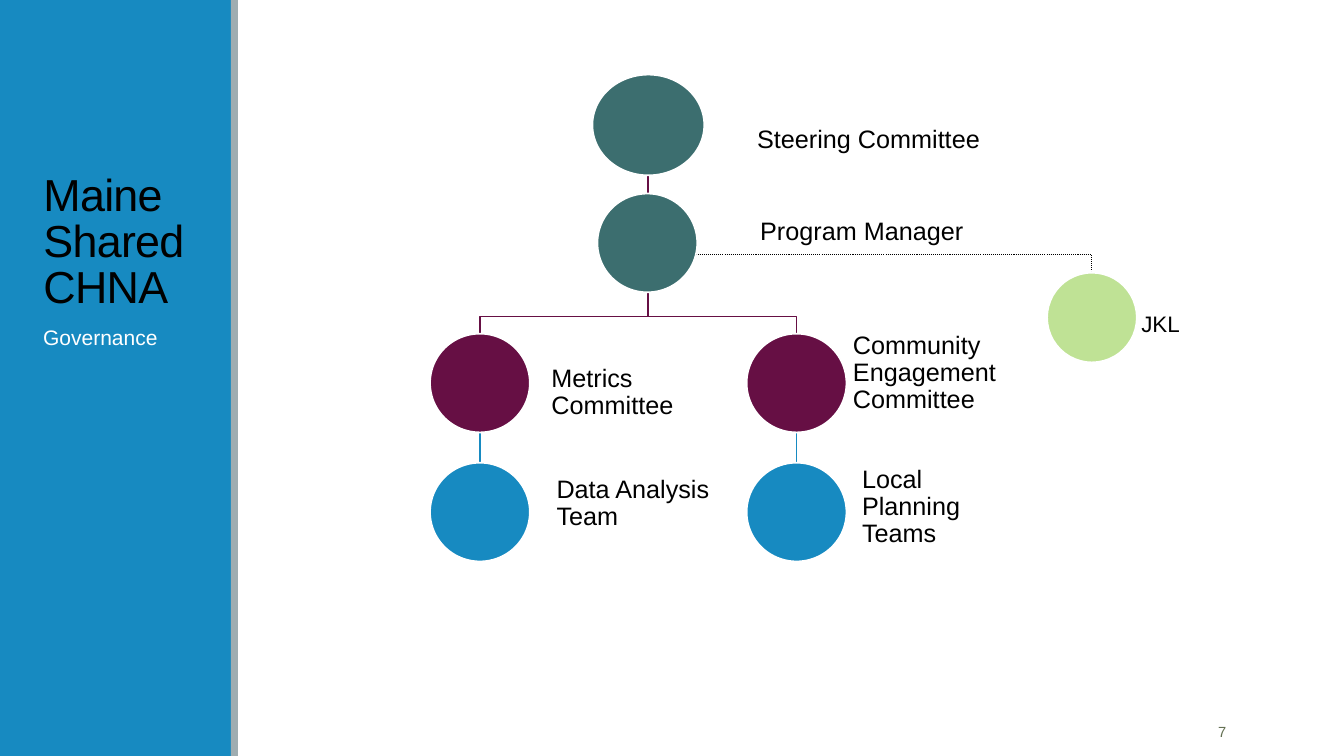
from dataclasses import dataclass

from lxml.etree import SubElement
from pptx import Presentation
from pptx.dml.color import RGBColor
from pptx.enum.dml import MSO_LINE
from pptx.enum.shapes import MSO_CONNECTOR, MSO_SHAPE
from pptx.enum.text import MSO_ANCHOR, MSO_AUTO_SIZE, PP_ALIGN
from pptx.oxml.ns import qn
from pptx.util import Inches, Pt


@dataclass(frozen=True)
class Theme:
    font: str = "Arial"
    blue: str = "178AC1"
    grey: str = "9FADB1"
    teal: str = "3C6E6F"
    plum: str = "660F44"
    lime: str = "BFE295"
    olive: str = "637052"
    black: str = "000000"
    white: str = "FFFFFF"
    title_size: float = 32
    label_size: float = 18
    partner_size: float = 16
    subtitle_size: float = 15
    number_size: float = 10.5
    line_width: float = 1.25
    dotted_width: float = 0.75


def set_attributes(target, values):
    for name, value in values.items():
        setattr(target, name, value)


class SlideBuilder:
    def __init__(self, slide, theme):
        self.slide = slide
        self.theme = theme

    def style_line(self, line, color, width):
        line.color.rgb = RGBColor.from_string(color)
        line.width = Pt(width)

    def shape(self, kind, box, fill, outline=None):
        shape = self.slide.shapes.add_shape(kind, *map(Inches, box))
        shape.shadow.inherit = False
        shape.fill.solid()
        shape.fill.fore_color.rgb = RGBColor.from_string(fill)
        if outline:
            self.style_line(shape.line, outline, self.theme.line_width)
        else:
            shape.line.fill.background()

    def circle(self, center, size, fill):
        box = [middle - length / 2 for middle, length in zip(center, size)]
        self.shape(MSO_SHAPE.OVAL, (*box, *size), fill, self.theme.white)

    def link(self, x, top, bottom, color):
        connector = self.slide.shapes.add_connector(
            MSO_CONNECTOR.STRAIGHT, Inches(x), Inches(top), Inches(x), Inches(bottom))
        self.style_line(connector.line, color, self.theme.line_width)
        SubElement(connector._element.spPr, qn("a:effectLst"))

    def elbow(self, start, bend, end, color, width, dash=None):
        points = [(start[0], bend), (end[0], bend), end]
        builder = self.slide.shapes.build_freeform(*map(Inches, start))
        builder.add_line_segments([tuple(map(Inches, point)) for point in points], close=False)
        shape = builder.convert_to_shape()
        shape.shadow.inherit = False
        shape.fill.background()
        self.style_line(shape.line, color, width)
        if dash:
            shape.line.dash_style = dash

    def format_text(self, shape, text, size, color, margins=(0.1, 0.05, 0.1, 0.05),
                    anchor=MSO_ANCHOR.MIDDLE, spacing=0.9, align=PP_ALIGN.LEFT):
        frame = shape.text_frame
        frame.text = text
        sides = ("margin_left", "margin_top", "margin_right", "margin_bottom")
        set_attributes(frame, dict(zip(sides, map(Inches, margins))))
        set_attributes(frame, {
            "word_wrap": True,
            "auto_size": MSO_AUTO_SIZE.NONE,
            "vertical_anchor": anchor,
        })
        paragraph = frame.paragraphs[0]
        set_attributes(paragraph, {"line_spacing": spacing, "alignment": align})
        run = paragraph.runs[0]
        set_attributes(run.font, {"name": self.theme.font, "size": Pt(size)})
        run.font.color.rgb = RGBColor.from_string(color)
        return run

    def text(self, box, text, size, color, **options):
        shape = self.slide.shapes.add_textbox(*map(Inches, box))
        self.format_text(shape, text, size, color, **options)

    def label(self, box, text, size):
        self.text(box, text, size, self.theme.black, margins=(0.07,) * 4)

    def title(self, box, text):
        title = self.slide.shapes.title
        set_attributes(title, dict(zip(("left", "top", "width", "height"), map(Inches, box))))
        run = self.format_text(title, text, self.theme.title_size, self.theme.black,
                               margins=(0.1, 0.05, 0.5, 0.05),
                               anchor=MSO_ANCHOR.BOTTOM, spacing=0.85)
        run._r.get_or_add_rPr().set("spc", "-50")
        title._element.getparent().append(title._element)


def main():
    theme = Theme()
    presentation = Presentation()
    set_attributes(presentation, {"slide_width": Inches(13.33), "slide_height": Inches(7.5)})
    slide = presentation.slides.add_slide(presentation.slide_layouts[5])
    builder = SlideBuilder(slide, theme)

    builder.shape(MSO_SHAPE.RECTANGLE, (0, 0, 2.29, 7.5), theme.blue)
    builder.shape(MSO_SHAPE.RECTANGLE, (2.29, 0, 0.07, 7.5), theme.grey)
    builder.title((0.33, 0.65, 2.87, 2.5), "Maine Shared CHNA")
    builder.text((0.33, 3.2, 2.87, 3.7), "Governance", theme.subtitle_size, theme.white,
                 anchor=MSO_ANCHOR.TOP)

    trunk = (6.43, 1.73)
    metrics_x, community_x, partner_x = 4.76, 7.9, 10.83
    committee_y, team_y = 3.8, 5.08
    builder.elbow(trunk, 2.53, (partner_x, 2.71), theme.black, theme.dotted_width,
                  MSO_LINE.ROUND_DOT)
    for x in (community_x, metrics_x):
        builder.link(x, 4.29, 4.59, theme.blue)
        builder.elbow(trunk, 3.14, (x, 3.31), theme.plum, theme.line_width)

    regular, large, small = (0.99, 0.98), (1.11, 1), (0.89, 0.89)
    label_size = (1.67, 1.11)
    nodes = [
        ("Program Manager", (6.42, 2.41), regular, theme.teal, (7.47, 1.75), (3.03, 1.11)),
        ("Steering Committee", (6.43, 1.24), large, theme.teal, (7.44, 0.58), (2.44, 1.63)),
        ("Metrics Committee", (metrics_x, committee_y), regular, theme.plum,
         (5.4, 3.34), label_size),
        ("Data Analysis Team", (metrics_x, team_y), regular, theme.blue,
         (5.45, 4.44), label_size),
        ("Community Engagement Committee", (community_x, committee_y), regular, theme.plum,
         (8.39, 3.15), label_size),
        ("Local Planning Teams", (community_x, team_y), regular, theme.blue,
         (8.48, 4.48), label_size),
        ("JKL", (partner_x, 3.15), small, theme.lime, (11.25, 2.67), label_size),
    ]
    for name, center, size, fill, label_at, label_box in nodes:
        builder.circle(center, size, fill)
        text_size = theme.partner_size if size == small else theme.label_size
        builder.label((*label_at, *label_box), name, text_size)

    builder.text((10.83, 7.06, 1.43, 0.4), "7", theme.number_size, theme.olive,
                 spacing=1.0, align=PP_ALIGN.RIGHT)
    presentation.save("out.pptx")


if __name__ == "__main__":
    main()
